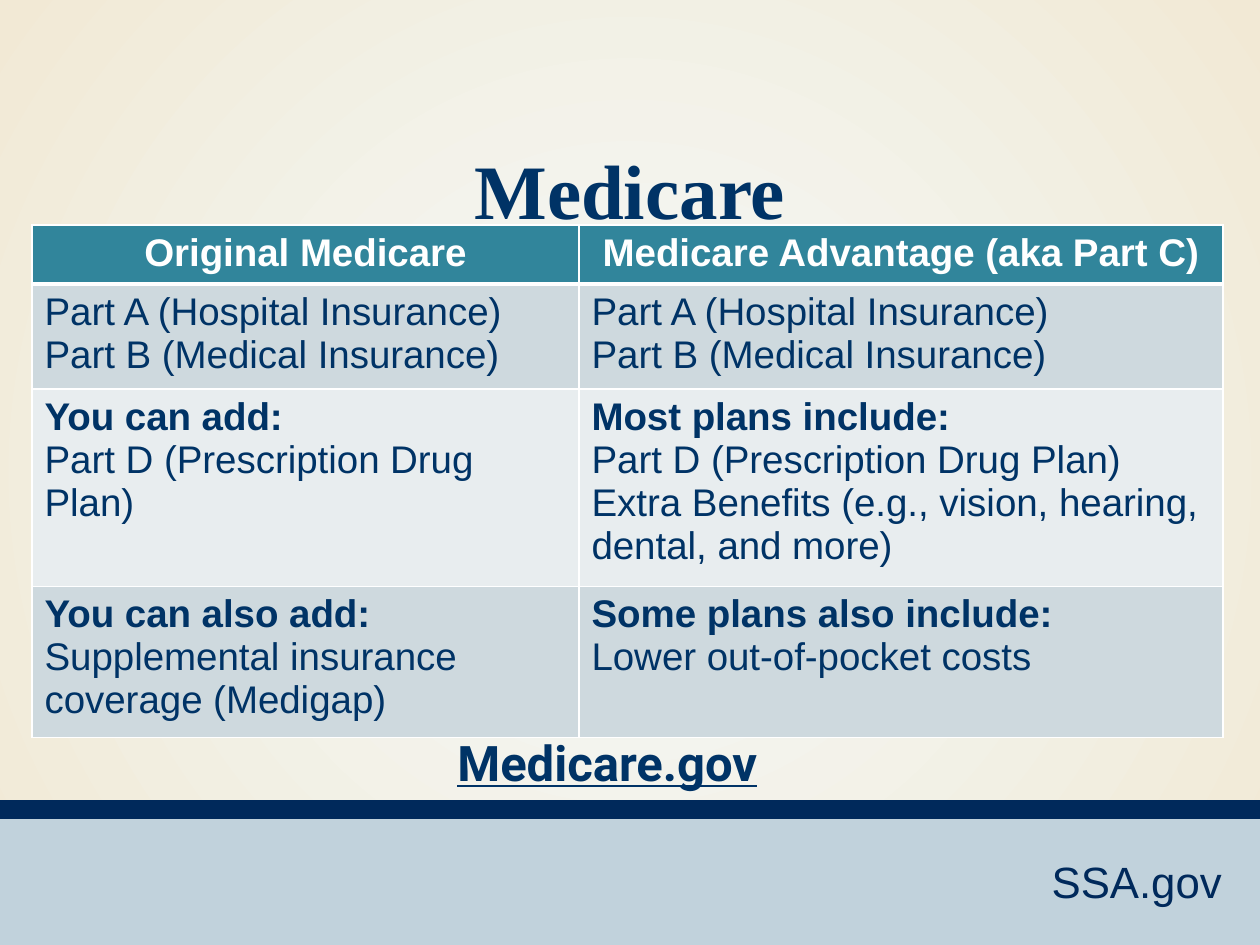
from dataclasses import dataclass

import pptx
import pptx.dml.color
import pptx.enum.shapes
import pptx.enum.text
import pptx.oxml
import pptx.oxml.ns
import pptx.util

PX_PER_INCH = 126
COLORS = {
    "glow": "F3FAFB",
    "sand": "F2E9D5",
    "footer": "C1D2DC",
    "stripe": "00295B",
    "ink": "003366",
    "header": "31859B",
    "band_dark": "CED9DE",
    "band_light": "E8EDEF",
    "white": "FFFFFF",
}
ALIGN = pptx.enum.text.PP_ALIGN
ANCHOR = pptx.enum.text.MSO_ANCHOR


@dataclass
class Box:
    left: int
    top: int
    width: int
    height: int

    def emu(self):
        return [px(n) for n in (self.left, self.top, self.width, self.height)]


@dataclass
class Row:
    height: int
    fill: str
    cells: tuple[tuple[str, ...], ...]
    lead_bold: bool = True
    header: bool = False


COLUMNS = (547, 644)
PARTS_A_B = ("Part A (Hospital Insurance)", "Part B (Medical Insurance)")
ROWS = (
    Row(55, "header", (("Original Medicare",), ("Medicare Advantage (aka Part C)",)),
        header=True),
    Row(99, "band_dark", (PARTS_A_B, PARTS_A_B), lead_bold=False),
    Row(185, "band_light", (
        ("You can add:", "Part D (Prescription Drug Plan)"),
        ("Most plans include:", "Part D (Prescription Drug Plan)",
         "Extra Benefits (e.g., vision, hearing, dental, and more)"))),
    Row(142, "band_dark", (
        ("You can also add:", "Supplemental insurance coverage (Medigap)"),
        ("Some plans also include:", "Lower out-of-pocket costs"))),
)


def px(n: int) -> int:
    return pptx.util.Emu(round(n * 914400 / PX_PER_INCH))


def rgb(name: str):
    return pptx.dml.color.RGBColor.from_string(COLORS[name])


def write(paragraph, text: str, *, size: int, font: str = "Arial", color: str = "ink",
          bold: bool = False, underline: bool = False, align=ALIGN.LEFT) -> None:
    paragraph.alignment = align
    run = paragraph.add_run()
    run.text = text
    run.font.size = pptx.util.Pt(size)
    run.font.name = font
    run.font.bold = bold
    run.font.underline = underline
    run.font.color.rgb = rgb(color)


def paint_background(slide) -> None:
    """Radial gradient that spreads from the middle of the slide."""
    fill = slide.background.fill
    fill.gradient()
    for stop, color in zip(fill.gradient_stops, ("glow", "sand")):
        stop.color.rgb = rgb(color)
    linear = slide.background._cSld.find(".//" + pptx.oxml.ns.qn("a:lin"))
    linear.getparent().replace(linear, pptx.oxml.parse_xml(
        f'<a:path {pptx.oxml.ns.nsdecls("a")} path="circle">'
        '<a:fillToRect l="50000" t="50000" r="50000" b="50000"/></a:path>'))


def add_bar(slide, box: Box, color: str) -> None:
    bar = slide.shapes.add_shape(pptx.enum.shapes.MSO_SHAPE.RECTANGLE, *box.emu())
    bar.shadow.inherit = False
    bar.fill.solid()
    bar.fill.fore_color.rgb = rgb(color)
    bar.line.fill.background()


def add_label(slide, box: Box, text: str, **text_format) -> None:
    frame = slide.shapes.add_textbox(*box.emu()).text_frame
    frame.word_wrap = True
    write(frame.paragraphs[0], text, **text_format)


def set_title(slide, box: Box, text: str, **text_format) -> None:
    title = slide.shapes.title
    title.left, title.top, title.width, title.height = box.emu()
    frame = title.text_frame
    frame.auto_size = pptx.enum.text.MSO_AUTO_SIZE.NONE
    frame.vertical_anchor = ANCHOR.TOP
    frame.margin_top = px(16)
    write(frame.paragraphs[0], text, **text_format)


def add_borders(cell, bottom_pt: int, top_pt: int) -> None:
    properties = cell._tc.get_or_add_tcPr()
    for side, width in (("L", 1), ("R", 1), ("T", top_pt), ("B", bottom_pt)):
        properties.append(pptx.oxml.parse_xml(
            f'<a:ln{side} {pptx.oxml.ns.nsdecls("a")} w="{pptx.util.Pt(width)}">'
            f'<a:solidFill><a:srgbClr val="{COLORS["white"]}"/></a:solidFill>'
            f'</a:ln{side}>'))


def fill_cell(cell, row: Row, lines: tuple[str, ...], top_pt: int) -> None:
    add_borders(cell, bottom_pt=3 if row.header else 1, top_pt=top_pt)
    cell.fill.solid()
    cell.fill.fore_color.rgb = rgb(row.fill)
    frame = cell.text_frame
    for index, line in enumerate(lines):
        paragraph = frame.add_paragraph() if index else frame.paragraphs[0]
        write(paragraph, line, size=22, bold=row.lead_bold and index == 0,
              color="white" if row.header else "ink",
              align=ALIGN.CENTER if row.header else ALIGN.LEFT)


def add_plan_table(slide, left: int, top: int) -> None:
    box = Box(left, top, sum(COLUMNS), sum(row.height for row in ROWS))
    table = slide.shapes.add_table(len(ROWS), len(COLUMNS), *box.emu()).table
    for column, width in zip(table.columns, COLUMNS):
        column.width = px(width)
    for r, row in enumerate(ROWS):
        table.rows[r].height = px(row.height)
        top_pt = 3 if r and ROWS[r - 1].header else 1
        for c, lines in enumerate(row.cells):
            fill_cell(table.cell(r, c), row, lines, top_pt)


def main() -> None:
    deck = pptx.Presentation()
    deck.slide_width, deck.slide_height = px(1260), px(945)
    slide = deck.slides.add_slide(deck.slide_layouts[5])
    paint_background(slide)
    add_bar(slide, Box(0, 813, 1260, 133), "footer")
    add_bar(slide, Box(0, 800, 1260, 19), "stripe")
    add_label(slide, Box(847, 849, 387, 66), "SSA.gov", size=25, color="stripe",
              align=ALIGN.RIGHT)
    set_title(slide, Box(0, 126, 1260, 86), "Medicare", size=44,
              font="Times New Roman", bold=True, align=ALIGN.CENTER)
    add_plan_table(slide, left=32, top=225)
    add_label(slide, Box(445, 726, 430, 72), "Medicare.gov", size=28, font="Roboto",
              bold=True, underline=True)
    deck.save("out.pptx")


if __name__ == "__main__":
    main()
